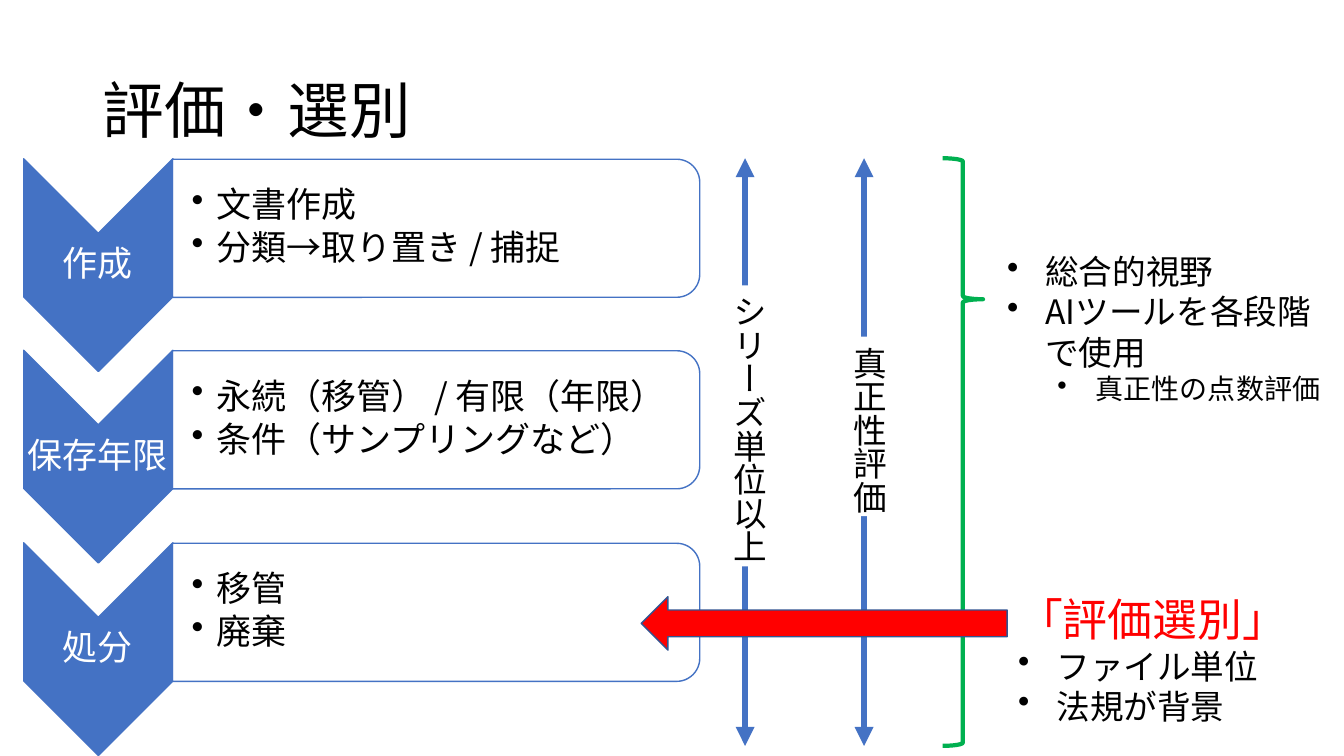
from dataclasses import dataclass

from lxml import etree
from pptx import Presentation
from pptx import util as u
from pptx.dml.color import RGBColor
from pptx.enum import shapes, text
from pptx.oxml.ns import qn

PX = 9144  # EMU per px, 100 px to the inch
FONT = "Noto Sans CJK JP"
BLUE, GREEN, RED, DARK_BLUE = "4472C4", "00B050", "FF0000", "325491"
BLACK, WHITE = "000000", "FFFFFF"
MIDDLE = text.MSO_ANCHOR.MIDDLE


@dataclass
class Line:
    words: str
    size: int = 24
    color: str = BLACK
    level: int = 0
    indent: int = 0  # px; a bullet hangs in front of the text
    hang: int = 38
    spacing: float = 1.0
    after: float = 0
    centered: bool = False


@dataclass
class Box:
    left: int
    top: int
    width: int
    height: int


@dataclass
class Stage:
    name: str
    points: tuple[str, ...]


@dataclass
class Span:
    words: str
    x: int
    label: Box


STAGES = [
    Stage("作成", ("文書作成", "分類→取り置き / 捕捉")),
    Stage("保存年限", ("永続（移管） / 有限（年限）", "条件（サンプリングなど）")),
    Stage("処分", ("移管", "廃棄")),
]
SPANS = [
    Span("シリーズ単位以上", 739, Box(707, 283, 61, 279)),
    Span("真正性評価", 857, Box(826, 334, 61, 178)),
]
SPAN_TOP, SPAN_BOTTOM = 157, 740

presentation = Presentation()
presentation.slide_width, presentation.slide_height = u.Emu(1333 * PX), u.Emu(750 * PX)
slide = presentation.slides.add_slide(presentation.slide_layouts[6])


def rgb(color: str) -> RGBColor:
    return RGBColor.from_string(color)


def place(box: Box) -> list[u.Emu]:
    return [u.Emu(n * PX) for n in (box.left, box.top, box.width, box.height)]


def write(frame, lines: list[Line]) -> None:
    for number, line in enumerate(lines):
        paragraph = frame.paragraphs[0] if number == 0 else frame.add_paragraph()
        paragraph.text = line.words
        paragraph.level = line.level
        if line.indent:
            properties = paragraph._p.get_or_add_pPr()
            properties.set("marL", str(line.indent * PX))
            properties.set("indent", str(-line.hang * PX))
            etree.SubElement(properties, qn("a:buChar")).set("char", "•")
        paragraph.line_spacing = line.spacing
        paragraph.space_after = u.Pt(line.after)
        paragraph.alignment = text.PP_ALIGN.CENTER if line.centered else text.PP_ALIGN.LEFT
        font = paragraph.font
        font.size, font.name = u.Pt(line.size), FONT
        font.color.rgb = rgb(line.color)
        etree.SubElement(font._element, qn("a:ea")).set("typeface", FONT)


def add_text(box: Box, lines: list[Line], anchor=text.MSO_ANCHOR.TOP,
             insets: tuple[int, int, int, int] = (10, 5, 10, 5),
             wrap: bool = True, grow: bool = False):
    shape = slide.shapes.add_textbox(*place(box))
    frame = shape.text_frame
    frame.word_wrap, frame.vertical_anchor = wrap, anchor
    if grow:
        frame.auto_size = text.MSO_AUTO_SIZE.SHAPE_TO_FIT_TEXT
    (frame.margin_left, frame.margin_top,
     frame.margin_right, frame.margin_bottom) = [u.Emu(n * PX) for n in insets]
    write(frame, lines)
    return shape


def add_outline(kind, box: Box, fill: str | None, line: str, weight: float = 1,
                rotation: int = 0):
    shape = slide.shapes.add_shape(kind, *place(box))
    shape.shadow.inherit = False
    shape.rotation = rotation
    if fill:
        shape.fill.solid()
        shape.fill.fore_color.rgb = rgb(fill)
    else:
        shape.fill.background()
    shape.line.color.rgb, shape.line.width = rgb(line), u.Pt(weight)
    return shape


def add_stage(stage: Stage, offset: int) -> None:
    add_outline(shapes.MSO_SHAPE.CHEVRON, Box(-8, 189 + offset, 211, 148), BLUE, BLUE,
                rotation=90)
    add_text(Box(23, 232 + offset, 148, 63),
             [Line(stage.name, 25, WHITE, spacing=0.9, after=8.75, centered=True)],
             MIDDLE, (2, 2, 2, 2))
    panel = add_outline(shapes.MSO_SHAPE.ROUND_2_SAME_RECTANGLE,
                        Box(364, -35 + offset, 137, 523), WHITE, BLUE, rotation=90)
    fill_color = panel._element.spPr.find(qn("a:solidFill"))[0]
    etree.SubElement(fill_color, qn("a:alpha")).set("val", "90000")
    add_text(Box(171, 164 + offset, 516, 124),
             [Line(point, 25, level=1, indent=25, hang=25, spacing=0.9, after=3.75)
              for point in stage.points],
             MIDDLE, (19, 2, 2, 2))


def add_span_arrow(span: Span) -> None:
    x = u.Emu(span.x * PX)
    arrow = slide.shapes.add_connector(shapes.MSO_CONNECTOR.STRAIGHT, x, u.Emu(SPAN_TOP * PX),
                                       x, u.Emu(SPAN_BOTTOM * PX))
    arrow.line.color.rgb, arrow.line.width = rgb(BLUE), u.Pt(4.5)
    for end in ("a:headEnd", "a:tailEnd"):
        etree.SubElement(arrow.line._get_or_add_ln(), qn(end)).set("type", "triangle")
    etree.SubElement(arrow._element.spPr, qn("a:effectLst"))


def add_span_label(span: Span) -> None:
    label = add_text(span.label, [Line(span.words)], wrap=False, grow=True)
    label.fill.solid()
    label.fill.fore_color.rgb = rgb(WHITE)
    label.text_frame._txBody.bodyPr.set("vert", "eaVert")


# Title
add_text(Box(92, 40, 1150, 145), [Line("評価・選別", 44, spacing=0.9)], MIDDLE)

# Stages, 190.5 px apart
for row, stage in enumerate(STAGES):
    add_stage(stage, row * 381 // 2)

# Spans over all stages
for span in SPANS:
    add_span_arrow(span)
for span in SPANS:
    add_span_label(span)

# Appraisal notes
add_text(Box(1000, 582, 294, 145),
         [Line("「評価選別」", 32, RED), Line("ファイル単位", indent=38),
          Line("法規が背景", indent=38)],
         wrap=False, grow=True)

# Brace with the overall view
brace = add_outline(shapes.MSO_SHAPE.RIGHT_BRACE, Box(935, SPAN_TOP, 40, SPAN_BOTTOM - SPAN_TOP),
                    None, GREEN, 3)
brace.adjustments[0], brace.adjustments[1] = 0.08, 0.24
add_text(Box(989, 244, 344, 165),
         [Line("総合的視野", indent=38), Line("AIツールを各段階で使用", indent=38),
          Line("真正性の点数評価", 20, level=1, indent=88)],
         grow=True)

# Arrow back to the disposal stage
add_outline(shapes.MSO_SHAPE.LEFT_ARROW, Box(636, 592, 363, 53), RED, DARK_BLUE)

presentation.save("out.pptx")
